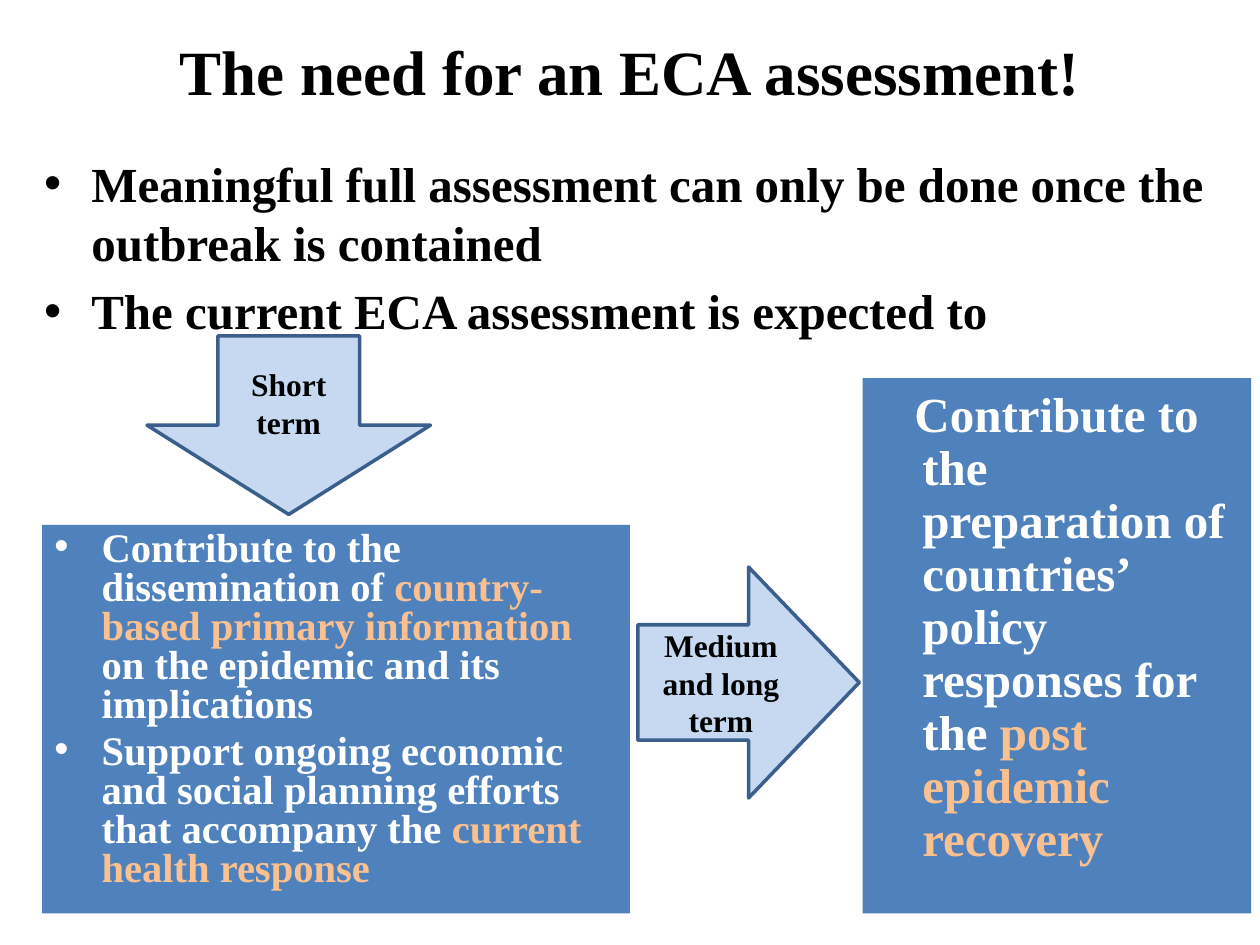
from lxml.etree import SubElement
from pptx import Presentation
from pptx.dml.color import RGBColor
from pptx.enum.shapes import MSO_SHAPE
from pptx.enum.text import MSO_ANCHOR, MSO_AUTO_SIZE, PP_ALIGN
from pptx.oxml.ns import qn
from pptx.util import Pt

BLACK, WHITE, PEACH = "000000", "FFFFFF", "FAC090"
BLUE, PALE_BLUE, DARK_BLUE = "4F81BD", "C6D9F1", "3A5F8C"


def color(hex_string):
    return RGBColor.from_string(hex_string)


def write_paragraphs(shape, paragraphs, size, align=PP_ALIGN.LEFT, spacing=1.0,
                     indent=None, bullet=False):
    """Fill a shape with paragraphs, each a list of (text, colour) runs."""
    frame = shape.text_frame
    frame.word_wrap = True
    frame.auto_size = MSO_AUTO_SIZE.NONE
    for index, runs in enumerate(paragraphs):
        paragraph = frame.add_paragraph() if index else frame.paragraphs[0]
        properties = paragraph._p.get_or_add_pPr()
        if indent is not None:
            properties.set("marL", str(Pt(27)))
            properties.set("indent", str(Pt(indent)))
        if bullet:
            SubElement(properties, qn("a:buFont"), typeface="Arial")
            SubElement(properties, qn("a:buChar"), char="•")
        paragraph.alignment = align
        paragraph.line_spacing = spacing
        paragraph.space_before = Pt(round(size * 0.2, 1) if index else 0)
        for text, hex_string in runs:
            run = paragraph.add_run()
            run.text = text
            run.font.name = "Times New Roman"
            run.font.size = Pt(size)
            run.font.bold = True
            run.font.color.rgb = color(hex_string)


presentation = Presentation()
presentation.slide_width = Pt(720)
presentation.slide_height = Pt(540)
slide = presentation.slides.add_slide(presentation.slide_layouts[1])

title = slide.shapes.title
title.left, title.top, title.width, title.height = Pt(36), Pt(12), Pt(648), Pt(56)
write_paragraphs(title, [[("The need for an ECA assessment!", BLACK)]], 36, PP_ALIGN.CENTER)

body = slide.placeholders[1]
body.left, body.top, body.width, body.height = Pt(18), Pt(84), Pt(690), Pt(114)
write_paragraphs(body, [
    [("Meaningful full assessment can only be done once the outbreak is contained", BLACK)],
    [("The current ECA assessment is expected to", BLACK)],
], 28, indent=-27, bullet=True)

short_term_goals = [
    [("Contribute to the dissemination of ", WHITE),
     ("country-based primary information ", PEACH),
     ("on the epidemic and its implications", WHITE)],
    [("Support ongoing economic and social planning efforts that accompany the ", WHITE),
     ("current health response", PEACH)],
]
long_term_goal = [
    [("Contribute to the preparation of countries’ policy responses for the ", WHITE),
     ("post epidemic recovery", PEACH)],
]

# left, top, width, height, top inset, paragraphs, size, spacing, indent, bullet
boxes = [
    (24, 300, 336, 222, 3.6, short_term_goals, 23.2, 0.8, -27, True),
    (493, 216, 222, 306, 7, long_term_goal, 28, 0.9, -4.5, False),
]
for left, top, width, height, inset, paragraphs, size, spacing, indent, bullet in boxes:
    box = slide.shapes.add_shape(MSO_SHAPE.RECTANGLE, Pt(left), Pt(top), Pt(width), Pt(height))
    box.shadow.inherit = False
    box.fill.solid()
    box.fill.fore_color.rgb = color(BLUE)
    box.line.fill.background()
    box.text_frame.vertical_anchor = MSO_ANCHOR.TOP
    box.text_frame.margin_top = Pt(inset)
    write_paragraphs(box, paragraphs, size, spacing=spacing, indent=indent, bullet=bullet)

arrows = [
    (MSO_SHAPE.DOWN_ARROW, 84, 192, 162, 102, "Short term"),
    (MSO_SHAPE.RIGHT_ARROW, 364.5, 324, 126.5, 132, "Medium and long term"),
]
for preset, left, top, width, height, label in arrows:
    arrow = slide.shapes.add_shape(preset, Pt(left), Pt(top), Pt(width), Pt(height))
    arrow.shadow.inherit = False
    arrow.fill.solid()
    arrow.fill.fore_color.rgb = color(PALE_BLUE)
    arrow.line.color.rgb = color(DARK_BLUE)
    arrow.line.width = Pt(2)
    arrow.text_frame.vertical_anchor = MSO_ANCHOR.MIDDLE
    write_paragraphs(arrow, [[(label, BLACK)]], 18, PP_ALIGN.CENTER)

presentation.save("out.pptx")
